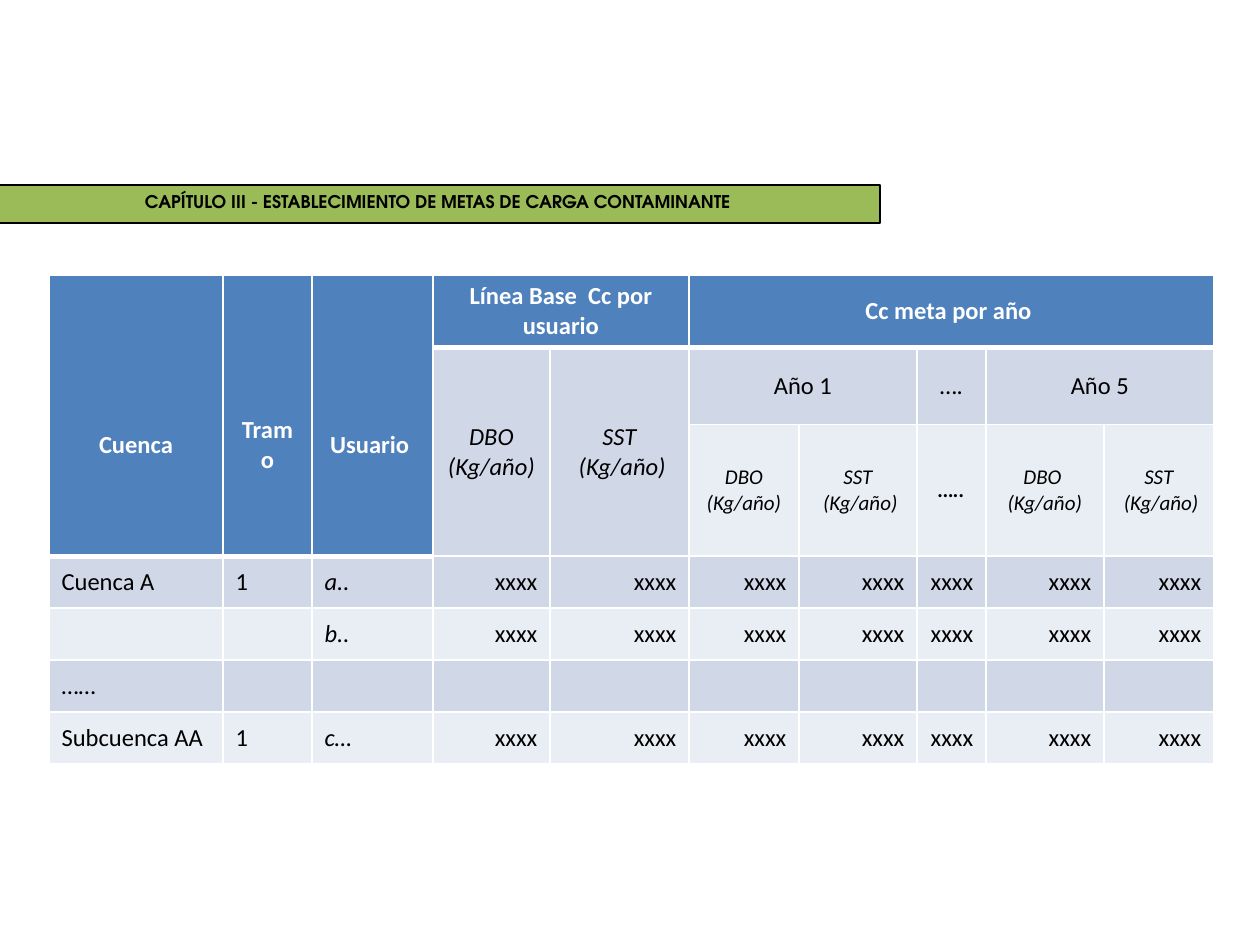
from lxml import etree
from pptx import Presentation, util as u
from pptx.dml.color import RGBColor
from pptx.enum import shapes, text
from pptx.oxml.ns import qn

PX = 914400 // 126
COLORS = {"head": "4F81BD", "dark": "D0D8E8", "light": "E9EDF4", "banner": "9BBB59",
          "white": "FFFFFF", "black": "000000"}
LEFT, CENTER, RIGHT = text.PP_ALIGN.LEFT, text.PP_ALIGN.CENTER, text.PP_ALIGN.RIGHT
COLS = [174, 89, 121, 117, 139, 110, 118, 69, 118, 110]
ROWS = [49, 77, 52, 52, 52, 52, 52]
DBO, SST = "DBO\n(Kg/año)", "SST\n (Kg/año)"
HEADERS = [(0, 0, 3, 1, "Cuenca"), (0, 1, 3, 1, "Tramo"), (0, 2, 3, 1, "Usuario "),
           (0, 3, 1, 2, "Línea Base  Cc por usuario"), (0, 5, 1, 5, "Cc meta por año ")]
YEARS = [(1, 5, 2, "Año 1"), (1, 7, 1, "…."), (1, 8, 2, "Año 5")]
UNITS = ["DBO (Kg/año)", SST, "…..", "DBO \n(Kg/año)", SST]
BODY = [("Cuenca A", "1", "a..", "xxxx"), ("", "", "b..", "xxxx"),
        ("……", "", "", ""), ("Subcuenca AA", "1", "c…", "xxxx")]


class Deck:
    """Holds the style and the current slide, and draws each kind of element."""

    def __init__(self):
        self.prs = Presentation()
        self.prs.slide_width, self.prs.slide_height = u.Inches(10), u.Inches(7.5)
        self.s = self.prs.slides.add_slide(self.prs.slide_layouts[6])

    def color(self, name):
        return RGBColor.from_string(COLORS[name])

    def label(self, tf, words, align, size=14, color="black", bold=False, italic=False,
              font="Calibri"):
        tf.text = words
        for p in tf.paragraphs:
            p.alignment = align
            f = p.font
            f.name, f.size, f.bold, f.italic = font, u.Pt(size), bold, italic
            f.color.rgb = self.color(color)

    def banner(self, x, y, w, h, words):
        sp = self.s.shapes.add_shape(shapes.MSO_SHAPE.RECTANGLE, *(v * PX for v in (x, y, w, h)))
        sp.shadow.inherit = False
        sp.fill.solid()
        sp.fill.fore_color.rgb = self.color("banner")
        sp.line.color.rgb = self.color("black")
        sp.line.width = u.Pt(0.75)
        sp.text_frame.vertical_anchor = text.MSO_ANCHOR.TOP
        self.label(sp.text_frame, words, CENTER, 10, bold=True, font="TeX Gyre Adventor")

    def table(self, x, y, cols, rows):
        frame = self.s.shapes.add_table(len(rows), len(cols), x * PX, y * PX,
                                        sum(cols) * PX, sum(rows) * PX)
        self.tbl = frame.table
        for col, w in zip(self.tbl.columns, cols):
            col.width = w * PX
        for row, h in zip(self.tbl.rows, rows):
            row.height = h * PX

    def paint(self, r, c, fill, bottom=1):
        cell = self.tbl.cell(r, c)
        tc_pr = cell._tc.get_or_add_tcPr()
        for side, pts in (("L", 1), ("R", 1), ("T", 1), ("B", bottom)):
            ln = etree.SubElement(tc_pr, qn("a:ln" + side), w=str(u.Pt(pts)))
            solid = etree.SubElement(ln, qn("a:solidFill"))
            etree.SubElement(solid, qn("a:srgbClr"), val=COLORS["white"])
        cell.fill.solid()
        cell.fill.fore_color.rgb = self.color(fill)
        cell.vertical_anchor = text.MSO_ANCHOR.MIDDLE

    def cell(self, r, c, words, align=CENTER, down=1, across=1, **style):
        cell = self.tbl.cell(r, c)
        if down * across > 1:
            cell.merge(self.tbl.cell(r + down - 1, c + across - 1))
        self.label(cell.text_frame, words, align, **style)
        return cell


def main():
    d = Deck()
    d.table(49, 275, COLS, ROWS)
    for r in range(len(ROWS)):
        for c in range(len(COLS)):
            head = r == 0 or (r < 3 and c < 3)
            light = r in (4, 6) or (r == 2 and c > 4)
            d.paint(r, c, "head" if head else "light" if light else "dark", 3 if head else 1)
    for r, c, down, across, words in HEADERS:
        cell = d.cell(r, c, words, down=down, across=across, color="white", bold=True)
        if down > 1:
            cell.margin_top = 66 * PX
    for c, words in ((3, DBO), (4, SST)):
        d.cell(1, c, words, down=2, italic=True)
    for r, c, across, words in YEARS:
        d.cell(r, c, words, across=across)
    for c, words in enumerate(UNITS, 5):
        d.cell(2, c, words, size=12, italic=True, bold=c == 7)
    for r, (basin, reach, user, load) in enumerate(BODY, 3):
        for c, words in enumerate([basin, reach, user] + [load] * 7):
            d.cell(r, c, words, RIGHT if c > 2 else LEFT, italic=c == 2)
    d.banner(-5, 185, 885, 38, "CAPÍTULO III - ESTABLECIMIENTO DE METAS DE CARGA CONTAMINANTE")
    d.prs.save("out.pptx")


if __name__ == "__main__":
    main()
